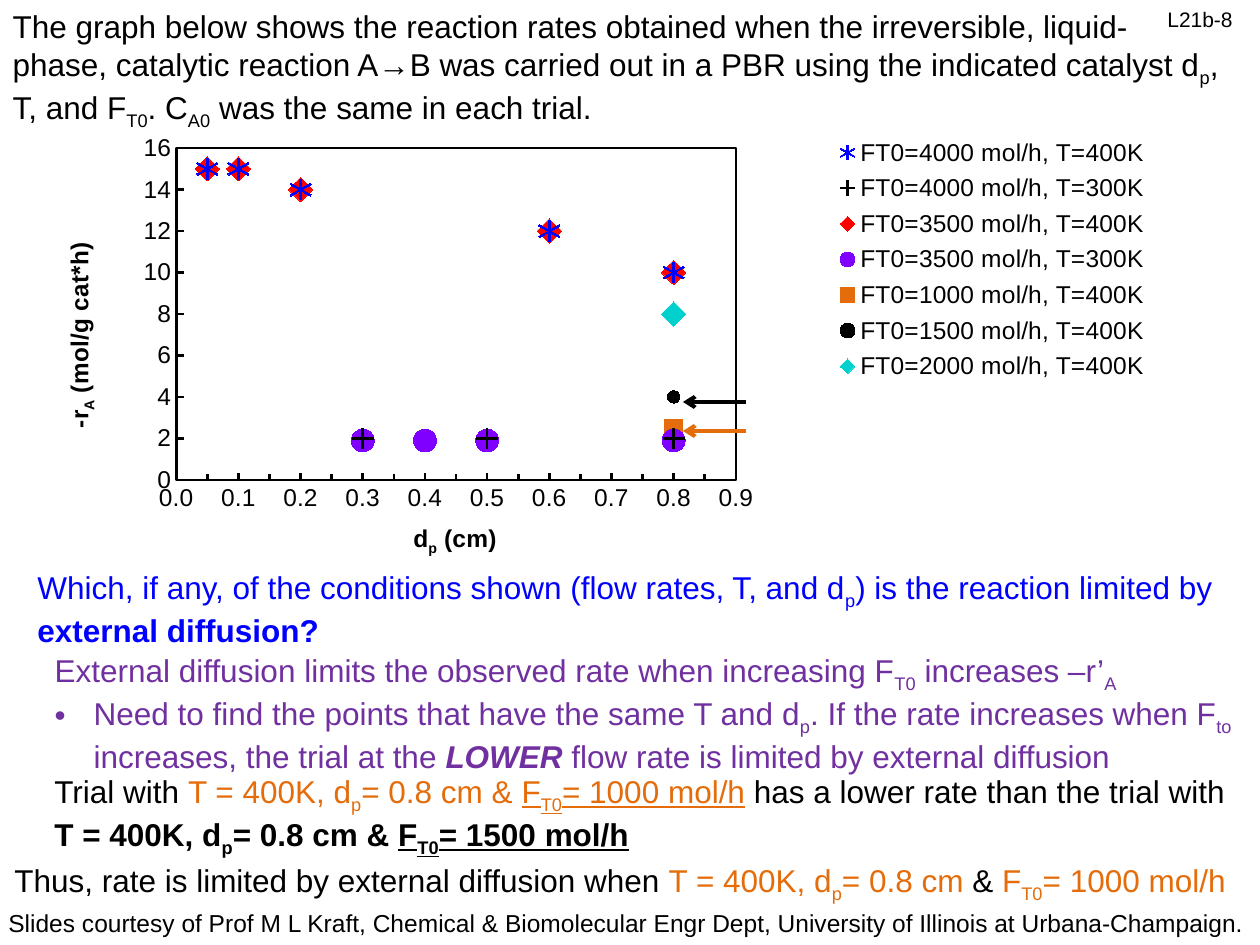
from pptx import Presentation
from pptx.chart.data import XyChartData
from pptx.dml.color import RGBColor
from pptx.enum.chart import XL_CHART_TYPE as CT, XL_LEGEND_POSITION as LP
from pptx.enum.chart import XL_MARKER_STYLE as MS, XL_TICK_MARK as TM
from pptx.enum.shapes import MSO_CONNECTOR
from pptx.enum.text import MSO_ANCHOR, MSO_AUTO_SIZE, PP_ALIGN
from pptx.oxml import parse_xml
from pptx.oxml.ns import nsdecls, qn
from pptx.util import Emu, Pt
from lxml.etree import SubElement

BLACK = RGBColor(0, 0, 0)
BLUE = RGBColor(0, 0, 255)
RED = RGBColor(255, 0, 0)
VIOLET = RGBColor(0x7F, 0, 0xFF)
PURPLE = RGBColor(0x70, 0x30, 0xA0)
ORANGE = RGBColor(0xE4, 0x6C, 0x0A)
TEAL = RGBColor(0, 0xD1, 0xCC)


def px(n):
    return Emu(round(n * 914400 / 126))


def add_text(p, text, size=18, color=BLACK, bold=False, italic=False, underline=False):
    for i, part in enumerate(text.split("~")):
        if not part:
            continue
        r = p.add_run()
        r.text = part
        f = r.font
        f.name, f.size, f.color.rgb = "Arial", Pt(size), color
        f.bold, f.italic, f.underline = bold, italic, underline
        if i % 2:
            f._element.set("baseline", "-25000")


def set_layout(el, **pos):
    layout = el.find(qn("c:layout"))
    if layout is None:
        layout = parse_xml(f"<c:layout {nsdecls('c')}/>")
        overlay = el.find(qn("c:overlay"))
        el.insert(0 if overlay is None else el.index(overlay), layout)
    for child in list(layout):
        layout.remove(child)
    manual = SubElement(layout, qn("c:manualLayout"))
    if el.tag == qn("c:plotArea"):
        SubElement(manual, qn("c:layoutTarget")).set("val", "inner")
    for k in ("x", "y"):
        SubElement(manual, qn(f"c:{k}Mode")).set("val", "edge")
    for k, v in pos.items():
        SubElement(manual, qn(f"c:{k}")).set("val", str(v))


class Deck:
    font, text_size, line_width = "Arial", 18, 2.25

    def __init__(self, prs):
        self.s = prs.slides.add_slide(prs.slide_layouts[1])

    def fill_text(self, sp, box, paragraphs, size=None, wrap=True):
        sp.left, sp.top, sp.width, sp.height = map(px, box)
        tf = sp.text_frame
        tf.word_wrap = wrap
        tf.auto_size = MSO_AUTO_SIZE.NONE
        tf.vertical_anchor = MSO_ANCHOR.TOP
        for i, runs in enumerate(paragraphs):
            p = tf.add_paragraph() if i else tf.paragraphs[0]
            p.alignment = PP_ALIGN.LEFT
            p.space_before = p.space_after = Pt(0)
            for text, fmt in runs:
                add_text(p, text, size=size or self.text_size, **fmt)
        return tf

    def title(self, box, paragraphs):
        self.fill_text(self.s.shapes.title, box, paragraphs)

    def body(self, box, paragraphs, indent):
        tf = self.fill_text(self.s.placeholders[1], box, paragraphs)
        for i, p in enumerate(tf.paragraphs):
            pPr = p._p.get_or_add_pPr()
            pPr.set("marL", str(px(indent) if i else 0))
            pPr.set("indent", str(-px(indent) if i else 0))
            if i:
                SubElement(pPr, qn("a:buChar")).set("char", "•")
            else:
                SubElement(pPr, qn("a:buNone"))

    def text(self, box, *runs, size=None, wrap=True):
        sp = self.s.shapes.add_textbox(0, 0, 0, 0)
        self.fill_text(sp, box, [runs], size, wrap)

    def arrow(self, x1, x2, y, color):
        c = self.s.shapes.add_connector(MSO_CONNECTOR.STRAIGHT, px(x1), px(y), px(x2), px(y))
        c.line.color.rgb, c.line.width = color, Pt(self.line_width)
        SubElement(c.line._get_or_add_ln(), qn("a:tailEnd")).set("type", "arrow")
        SubElement(c._element.spPr, qn("a:effectLst"))

    def axis(self, axis, title, top, step, fmt, pos):
        axis.has_major_gridlines = False
        axis.minimum_scale, axis.maximum_scale, axis.major_unit = 0, top, step
        axis.major_tick_mark = TM.INSIDE
        axis.tick_labels.number_format = fmt
        axis.tick_labels.number_format_is_linked = False
        axis.format.line.color.rgb, axis.format.line.width = BLACK, Pt(1.5)
        add_text(axis.axis_title.text_frame.paragraphs[0], title, size=14, bold=True)
        set_layout(axis.axis_title._element, x=pos[0], y=pos[1])

    def scatter(self, box, series):
        data = XyChartData()
        for name, points, *_ in series:
            sr = data.add_series(name)
            for x, y in points:
                sr.add_data_point(x, y)
        chart = self.s.shapes.add_chart(CT.XY_SCATTER, *map(px, box), data).chart
        f = chart.font
        f.name, f.size, f.color.rgb = self.font, Pt(14), BLACK
        chart.has_title = False
        chart.plots[0].vary_by_categories = False
        for sr, (_, _, style, size, color) in zip(chart.plots[0].series, series):
            sr.format.line.fill.background()
            m = sr.marker
            m.style, m.size = style, size
            m.format.fill.solid()
            m.format.fill.fore_color.rgb = color
            m.format.line.color.rgb = color
        self.axis(chart.category_axis, "d~p~ (cm)", 0.9, 0.1, "#,##0.0", (0.31, 0.91))
        self.axis(chart.value_axis, "-r~A~ (mol/g cat*h)", 16, 2, "0", (0.01, 0.27))
        chart.category_axis.minor_unit = 0.05
        chart.category_axis.minor_tick_mark = TM.INSIDE
        chart.has_legend = True
        chart.legend.position = LP.RIGHT
        chart.legend.include_in_layout = False
        set_layout(chart.legend._element, x=0.67, y=0.02, w=0.28, h=0.59)
        area = chart._chartSpace.chart.plotArea
        set_layout(area, x=0.11, y=0.06, w=0.48, h=0.76)
        area.append(parse_xml(
            f'<c:spPr {nsdecls("c", "a")}><a:noFill/><a:ln w="19050"><a:solidFill>'
            f'<a:srgbClr val="{BLACK}"/></a:solidFill></a:ln></c:spPr>'))


def run(text, **fmt):
    return text, fmt


def main():
    prs = Presentation()
    prs.slide_width, prs.slide_height = px(1260), px(945)
    d = Deck(prs)
    d.title((0, 1, 1260, 127), [
        [run("The graph below shows the reaction rates obtained when the irreversible, liquid-")],
        [run("phase, catalytic reaction A→B was carried out in a PBR using the indicated "
             "catalyst d~p~, T, and F~T0~. C~A0~ was the same in each trial.")]])

    hot = [(0.05, 15), (0.1, 15), (0.2, 14), (0.6, 12), (0.8, 10)]
    d.scatter((48, 122, 1166, 441), [
        ("FT0=4000 mol/h, T=400K", hot, MS.STAR, 12, BLUE),
        ("FT0=4000 mol/h, T=300K", [(x, 2) for x in (0.3, 0.5, 0.8)], MS.PLUS, 12, BLACK),
        ("FT0=3500 mol/h, T=400K", hot, MS.DIAMOND, 14, RED),
        ("FT0=3500 mol/h, T=300K", [(x, 1.9) for x in (0.3, 0.4, 0.5, 0.8)],
         MS.CIRCLE, 13, VIOLET),
        ("FT0=1000 mol/h, T=400K", [(0.8, 2.5)], MS.SQUARE, 10, ORANGE),
        ("FT0=1500 mol/h, T=400K", [(0.8, 4)], MS.CIRCLE, 7, BLACK),
        ("FT0=2000 mol/h, T=400K", [(0.8, 8)], MS.DIAMOND, 14, TEAL)])
    d.arrow(746, 683, 431, ORANGE)
    d.arrow(746, 683, 402, BLACK)

    d.text((25, 562, 1210, 89),
           run("Which, if any, of the conditions shown (flow rates, T, and d~p~) is the "
               "reaction limited by ", color=BLUE),
           run("external diffusion?", color=BLUE, bold=True))
    d.body((42, 645, 1210, 127), [
        [run("External diffusion limits the observed rate when increasing F~T0~ "
             "increases –r’~A~", color=PURPLE)],
        [run("Need to find the points that have the same T and d~p~. If the rate increases "
             "when F~to~ increases, the trial at the ", color=PURPLE),
         run("LOWER", color=PURPLE, bold=True, italic=True),
         run(" flow rate is limited by external diffusion", color=PURPLE)]], indent=39)
    d.text((42, 766, 1218, 89),
           run("Trial with "),
           run("T = 400K, d~p~= 0.8 cm & ", color=ORANGE),
           run("F~T0~= 1000 mol/h", color=ORANGE, underline=True),
           run(" has a lower rate than the trial with "),
           run("T = 400K, d~p~= 0.8 cm & ", bold=True),
           run("F~T0~= 1500 mol/h", bold=True, underline=True))
    d.text((2, 855, 1252, 50),
           run("Thus, rate is limited by external diffusion when "),
           run("T = 400K, d~p~= 0.8 cm ", color=ORANGE),
           run("&"),
           run(" F~T0~= 1000 mol/h", color=ORANGE), wrap=False)
    d.text((-4, 902, 1268, 43),
           run("Slides courtesy of Prof M L Kraft, Chemical & Biomolecular Engr Dept, "
               "University of Illinois at Urbana-Champaign."), size=14, wrap=False)
    d.text((1155, 0, 105, 38), run("L21b-8"), size=12, wrap=False)
    prs.save("out.pptx")


if __name__ == "__main__":
    main()
